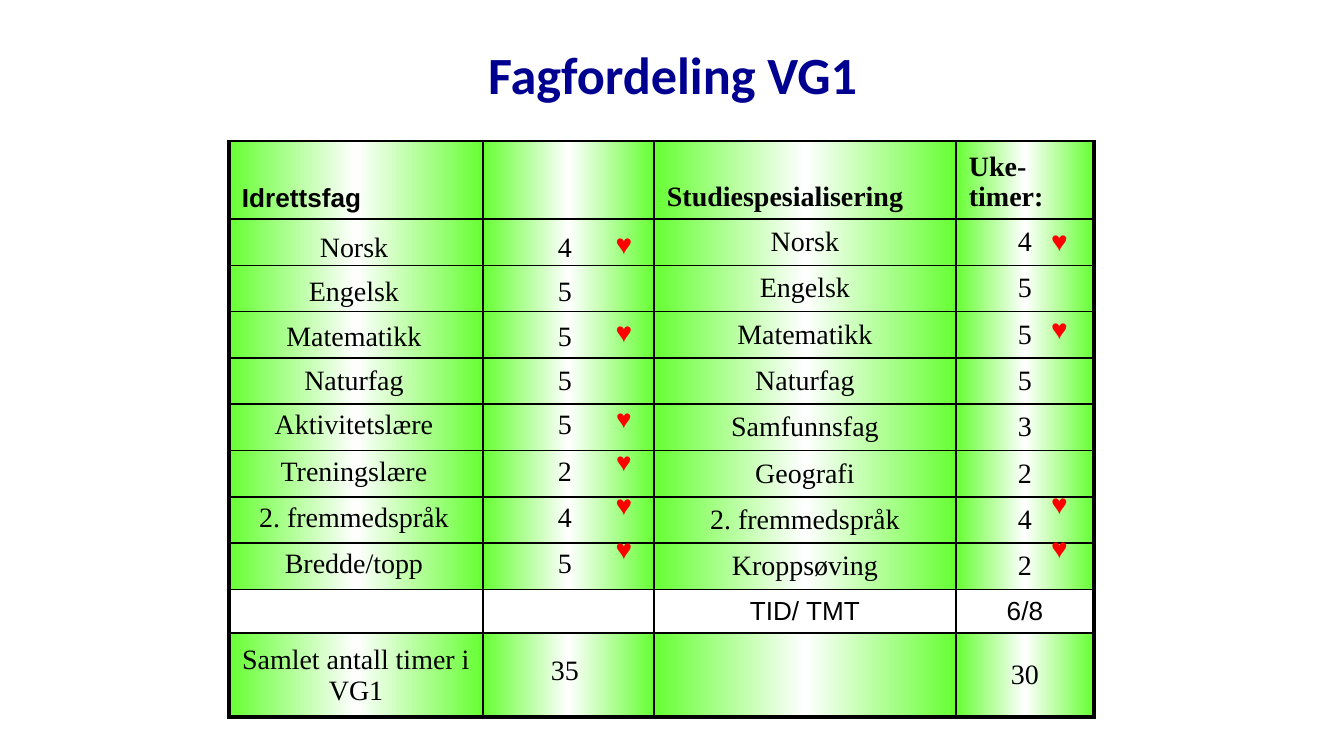
from lxml.etree import SubElement as Sub
from pptx import Presentation
from pptx.dml.color import RGBColor as Rgb
from pptx.enum.text import MSO_ANCHOR as Anchor, PP_ALIGN as Align
from pptx.oxml.ns import qn
from pptx.util import Emu, Pt

HUES = {"ink": "000000", "title": "000090", "heart": "FF0000",
        "green": "66FF33", "white": "FFFFFF"}
PLAIN = "{2D5ABB26-0587-4C30-8999-92F81FD0307C}"
HEART = "♥"


def px(count):
    return Emu(round(count * 914400 / 134.4))


def put(para, text, size=15, face="Times New Roman", hue="ink",
        bold=False, align=Align.CENTER, before=0):
    para.alignment = align
    para.space_before = Pt(before)
    if not text:
        Sub(para._p, qn("a:endParaRPr"), sz=str(size * 100))
        return
    run = para.add_run()
    run.text = text
    font = run.font
    font.size, font.name, font.bold = Pt(size), face, bold
    font.color.rgb = Rgb.from_string(HUES[hue])


class Deck:
    def __init__(self):
        self.show = Presentation()
        self.show.slide_width, self.show.slide_height = px(1344), px(756)
        self.slide = self.show.slides.add_slide(self.show.slide_layouts[5])

    def title(self, text, x, y, w, h):
        box = self.slide.shapes.title
        box.left, box.top, box.width, box.height = map(px, (x, y, w, h))
        frame = box.text_frame
        frame.word_wrap = True
        frame.vertical_anchor = Anchor.TOP
        put(frame.paragraphs[0], text, size=28, face="Calibri",
            hue="title", bold=True)

    def column(self, lines, x, y, w, h):
        box = self.slide.shapes.add_textbox(*map(px, (x, y, w, h)))
        frame = box.text_frame
        frame.word_wrap = True
        for row, (text, gap) in enumerate(lines):
            para = frame.add_paragraph() if row else frame.paragraphs[0]
            put(para, text, before=gap)

    def table(self, x, y, cols, rows):
        frame = self.slide.shapes.add_table(
            len(rows), len(cols), *map(px, (x, y, sum(cols), sum(rows))))
        grid = frame.table
        grid.first_row = grid.horz_banding = False
        grid._tbl.tblPr.find(qn("a:tableStyleId")).text = PLAIN
        for col, w in zip(grid.columns, cols):
            col.width = px(w)
        for row, h in zip(grid.rows, rows):
            row.height = px(h)
        return grid

    def cell(self, cell, text, anchor=Anchor.MIDDLE, **style):
        cell.margin_left = cell.margin_right = px(13)
        cell.margin_top = cell.margin_bottom = px(6)
        cell.vertical_anchor = anchor
        cell.fill.background()
        put(cell.text_frame.paragraphs[0], text, **style)

    def border(self, cell, **widths):
        tag = cell._tc.tcPr
        for spot, side in enumerate("LRTB"):
            line = Sub(tag, qn("a:ln" + side), w=str(Pt(widths.get(side, 1))))
            Sub(Sub(line, qn("a:solidFill")), qn("a:srgbClr"), val=HUES["ink"])
            tag.insert(spot, line)

    def shade(self, cell):
        tag = cell._tc.tcPr
        tag.remove(tag.find(qn("a:noFill")))
        grad = Sub(tag, qn("a:gradFill"), rotWithShape="1")
        stops = Sub(grad, qn("a:gsLst"))
        for spot, hue in ((0, "green"), (50, "white"), (100, "green")):
            stop = Sub(stops, qn("a:gs"), pos=str(spot * 1000))
            Sub(stop, qn("a:srgbClr"), val=HUES[hue])
        Sub(grad, qn("a:lin"), ang="0", scaled="1")

    def hearts(self, x, y, w, sizes):
        grid = self.table(x, y, [w], [44, 43, 44, 43, 43, 43, 44, 44])
        for row in range(8):
            size = sizes.get(row)
            self.cell(grid.cell(row, 0), HEART if size else "",
                      size=size or 14, hue="heart")


SPORT = [("Norsk", 4), ("Engelsk", 5), ("Matematikk", 5), ("Naturfag", 5),
         ("Aktivitetslære", 5), ("Treningslære", 2),
         ("2. fremmedspråk", 4), ("Bredde/topp", 5)]
STUDY = [("Norsk", 4), ("Engelsk", 5), ("Matematikk", 5), ("Naturfag", 5),
         ("Samfunnsfag", 3), ("Geografi", 2),
         ("2. fremmedspråk", 4), ("Kroppsøving", 2)]
GAPS = [0] + [5.75] * 4 + [6.75] * 3


def main():
    deck = Deck()
    deck.title("Fagfordeling VG1", 458, 36, 429, 75)

    body = [["Idrettsfag", "", "Studiespesialisering", "Uke-timer:"]]
    body += [["", "", name, str(hours)] for name, hours in STUDY]
    body += [["", "", "TID/ TMT", "6/8"],
             ["Samlet antall timer i VG1", "", "", "30"]]
    last = len(body) - 1
    grid = deck.table(229, 141, [254, 171, 302, 138],
                      [78] + [44] * 8 + [42, 84])
    for r, row in enumerate(body):
        for c, text in enumerate(row):
            cell = grid.cell(r, c)
            style = {}
            if r == 0:
                style = dict(anchor=Anchor.BOTTOM, bold=True, align=Align.LEFT)
            if r == last - 1 or (r, c) == (0, 0):
                style.update(size=14, face="Arial")
            deck.cell(cell, text, **style)
            deck.border(cell, L=1 if c else 2.25, R=2.25 if c == 3 else 1,
                        B=2.25 if r == last else 1)
            if r != last - 1:
                deck.shade(cell)

    deck.hearts(1025, 220, 69, dict.fromkeys((0, 2, 6, 7), 15))
    deck.hearts(593, 223, 62, {0: 15, 2: 15, 4: 14, 5: 14, 6: 15, 7: 15})

    names = [name for name, _ in SPORT]
    hours = [str(count) for _, count in SPORT]
    deck.column(zip(names, GAPS), 229, 223, 250, 356)
    deck.column(zip(hours + ["35"], GAPS + [39.5]), 498, 223, 134, 464)
    deck.show.save("out.pptx")


if __name__ == "__main__":
    main()
